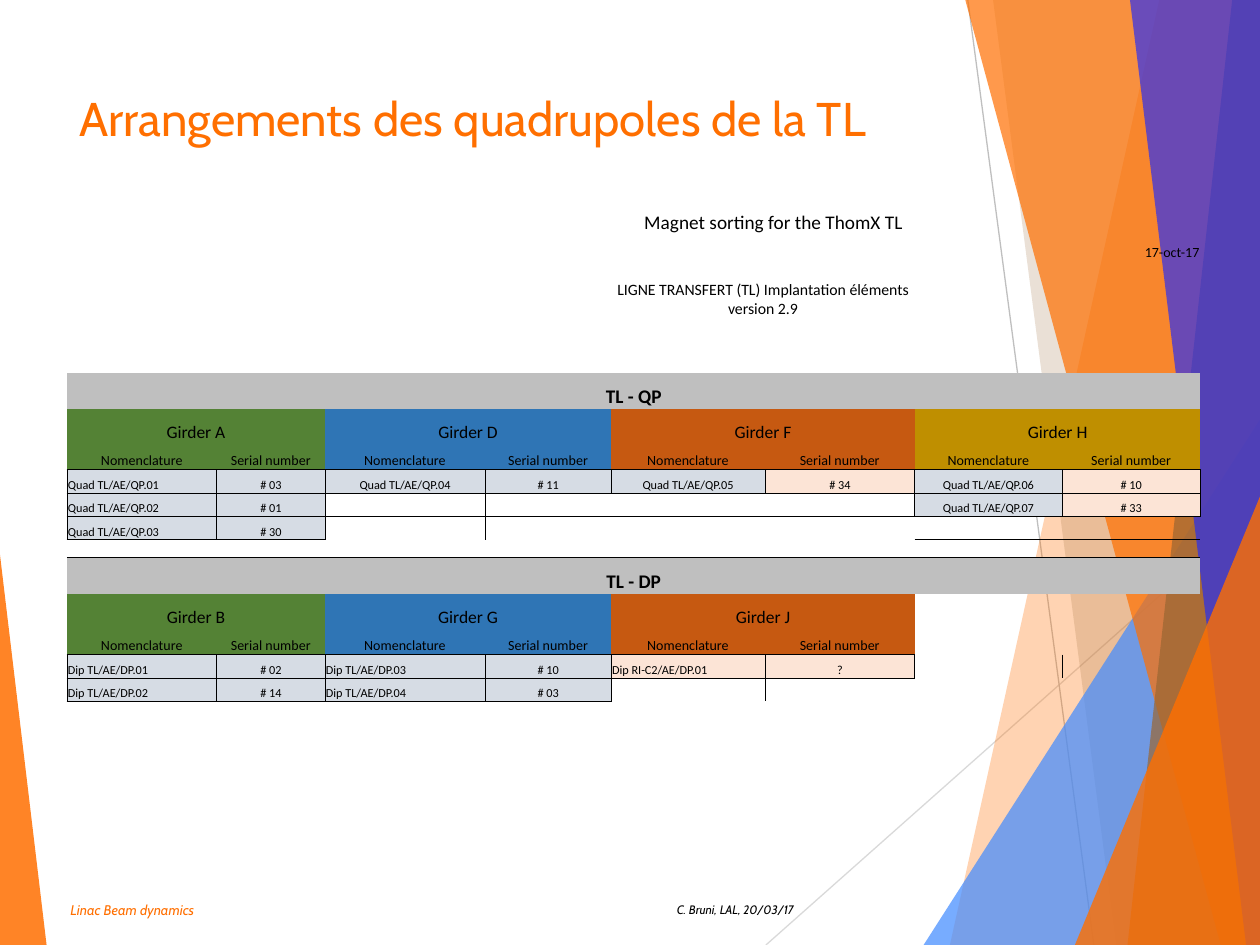
from collections import defaultdict
from lxml import etree
from pptx import Presentation
from pptx.dml.color import RGBColor
from pptx.enum.shapes import MSO_CONNECTOR
from pptx.enum.text import MSO_ANCHOR, PP_ALIGN
from pptx.oxml.ns import qn
from pptx.util import Cm, Pt

LEFT, CENTER, RIGHT = PP_ALIGN.LEFT, PP_ALIGN.CENTER, PP_ALIGN.RIGHT
BOTTOM = MSO_ANCHOR.BOTTOM
STRAIGHT = MSO_CONNECTOR.STRAIGHT

THEME = {
    "heading_font": "Cabin", "table_font": "Calibri",
    "orange": "FF6F00", "brown": "996633", "sky": "438CFF", "violet": "1F29FD",
    "black": "000000", "grey": "BFBFBF", "pale_grey": "D9D9D9",
    "blue_cell": "D6DCE4", "peach_cell": "FCE4D6",
    "girders": ["548235", "2F75B5", "C65911", "BF8F00"],
    "title": 27, "section": 11, "girder": 10, "subtitle": 9,
    "small": 8, "data": 7, "empty": 6,
}
BLUE, PEACH = THEME["blue_cell"], THEME["peach_cell"]
NO_GRID_STYLE = "{2D5ABB26-0587-4C30-8999-92F81FD0307C}"

W, H = 25.4, 19.05
LINES = [((15.44, H), (25.37, 10.24), "pale_grey"), ((19.51, 0), (22.05, H), "grey")]
FACETS = [
    ("orange", 30, [(23.37, 0), (19.15, H), (W, H), (W, 0)]),
    ("brown", 20, [(20.02, 0), (22.5, H), (W, H), (W, 0)]),
    ("sky", 72, [(18.62, H), (W, 8.46), (W, H)]),
    ("orange", 70, [(19.46, 0), (24.61, H), (W, H), (W, 0)]),
    ("brown", 70, [(24.84, 0), (22.73, H), (W, H), (W, 0)]),
    ("violet", 65, [(22.78, 0), (25.12, H), (W, H), (W, 0)]),
    ("orange", 80, [(21.67, H), (W, 10.01), (W, H)]),
    ("orange", 85, [(0, 11.18), (0.94, H), (0, H)]),
]
TEXTS = [
    ("Linac Beam dynamics", (1.24, 18.08, 5.51, 0.53),
     {"size": THEME["small"], "color": THEME["orange"], "italic": True}),
    ("C. Bruni, LAL, 20/03/17", (8.92, 18.08, 7.26, 0.48),
     {"size": THEME["data"], "italic": True, "align": RIGHT}),
    ("Arrangements des quadrupoles de la TL", (1.42, 1.7, 17.91, 1.93),
     {"size": THEME["title"], "color": THEME["orange"]}),
]

COLS = [3.02, 2.18, 3.23, 2.54, 3.1, 3.02, 2.97, 2.79]
HEADINGS = [0.74, 0.69, 0.53]
ROWS = ([0.74, 0.53, 1.17] + [0.36] * 3 + HEADINGS + [0.47] * 3
        + [0.36] + HEADINGS + [0.47] * 2)
NOTES = [
    (0, 3, 4, "Magnet sorting for the ThomX TL", THEME["section"], CENTER),
    (1, 7, 1, "17-oct-17", THEME["small"], RIGHT),
    (2, 4, 2, "LIGNE TRANSFERT (TL) Implantation éléments version 2.9",
     THEME["subtitle"], CENTER),
]
SECTIONS = [
    (6, "TL - QP", [
        ("Girder A", LEFT, BLUE, BLUE, [("Quad TL/AE/QP.01", "# 03"),
                                        ("Quad TL/AE/QP.02", "# 01"),
                                        ("Quad TL/AE/QP.03", "# 30")]),
        ("Girder D", CENTER, BLUE, BLUE, [("Quad TL/AE/QP.04", "# 11")]),
        ("Girder F", CENTER, BLUE, PEACH, [("Quad TL/AE/QP.05", "# 34")]),
        ("Girder H", CENTER, BLUE, PEACH, [("Quad TL/AE/QP.06", "# 10"),
                                           ("Quad TL/AE/QP.07", "# 33")]),
    ]),
    (13, "TL - DP", [
        ("Girder B", LEFT, BLUE, BLUE, [("Dip TL/AE/DP.01", "# 02"),
                                        ("Dip TL/AE/DP.02", "# 14")]),
        ("Girder G", LEFT, BLUE, BLUE, [("Dip TL/AE/DP.03", "# 10"),
                                        ("Dip TL/AE/DP.04", "# 03")]),
        ("Girder J", LEFT, PEACH, PEACH, [("Dip RI-C2/AE/DP.01", "?")]),
    ]),
]


def rgb(color):
    return RGBColor.from_string(color)


def put_text(tf, text, size, font=THEME["heading_font"], color=THEME["black"],
             bold=False, italic=False, align=LEFT):
    p = tf.paragraphs[0]
    p.alignment = align
    r = p.add_run()
    r.text = text
    r.font.name, r.font.size = font, Pt(size)
    r.font.bold, r.font.italic = bold, italic
    r.font.color.rgb = rgb(color)


def add_line(slide, start, end, color):
    line = slide.shapes.add_connector(STRAIGHT, *map(Cm, start + end))
    line.line.color.rgb = rgb(color)
    line.line.width = Pt(0.75)
    etree.SubElement(line._element.spPr, qn("a:effectLst"))


def add_facet(slide, color, opacity, points):
    corners = [(Cm(x), Cm(y)) for x, y in points]
    builder = slide.shapes.build_freeform(*corners[0])
    builder.add_line_segments(corners[1:], close=True)
    sp = builder.convert_to_shape()
    sp.shadow.inherit = False
    sp.line.fill.background()
    sp.fill.solid()
    sp.fill.fore_color.rgb = rgb(color)
    tone = sp._element.spPr.find(qn("a:solidFill"))[0]
    etree.SubElement(tone, qn("a:alpha"), val=str(opacity * 1000))


def add_textbox(slide, text, box, style):
    tf = slide.shapes.add_textbox(*map(Cm, box)).text_frame
    tf.word_wrap = True
    tf.margin_left = tf.margin_right = Cm(0.18)
    tf.margin_top = tf.margin_bottom = Cm(0.1)
    put_text(tf, text, **style)


def plan_table():
    cells, borders, merges = {}, defaultdict(set), []

    def place(row, col, text, size, fill=None, align=CENTER, bold=False, span=1):
        cells[row, col] = (text, fill, {"size": size, "align": align, "bold": bold})
        if span > 1:
            merges.append((row, col, span))

    def outline(row, col):
        borders[row, col] |= set("LRTB")
        for dr, dc, side in ((-1, 0, "B"), (1, 0, "T"), (0, -1, "R"), (0, 1, "L")):
            borders[row + dr, col + dc].add(side)

    for row, col, span, text, size, align in NOTES:
        place(row, col, text, size, align=align, span=span)
    for top, heading, girders in SECTIONS:
        place(top, 0, heading, THEME["section"], THEME["grey"], bold=True, span=len(COLS))
        for i, (girder, align, name_fill, serial_fill, magnets) in enumerate(girders):
            col, fill = 2 * i, THEME["girders"][i]
            place(top + 1, col, girder, THEME["girder"], fill, span=2)
            place(top + 2, col, "Nomenclature", THEME["small"], fill)
            place(top + 2, col + 1, "Serial number", THEME["small"], fill)
            for row, (name, serial) in enumerate(magnets, top + 3):
                place(row, col, name, THEME["data"], name_fill, align)
                place(row, col + 1, serial, THEME["data"], serial_fill)
                outline(row, col)
                outline(row, col + 1)
    return cells, borders, merges


def add_borders(cell, sides):
    tcPr = cell._tc.get_or_add_tcPr()
    for side in "LRTB":
        if side in sides:
            ln = etree.SubElement(tcPr, qn("a:ln" + side), w=str(Pt(0.5)))
            fill = etree.SubElement(ln, qn("a:solidFill"))
            etree.SubElement(fill, qn("a:srgbClr"), val=THEME["black"])


def add_magnet_table(slide):
    frame = slide.shapes.add_table(len(ROWS), len(COLS), Cm(1.35), Cm(3.99),
                                   Cm(sum(COLS)), Cm(sum(ROWS)))
    table = frame.table
    table.first_row = table.horz_banding = False
    table._tbl.tblPr.find(qn("a:tableStyleId")).text = NO_GRID_STYLE
    for column, width in zip(table.columns, COLS):
        column.width = Cm(width)
    cells, borders, merges = plan_table()
    for r, height in enumerate(ROWS):
        table.rows[r].height = Cm(height)
        for c in range(len(COLS)):
            cell = table.cell(r, c)
            cell.margin_left = cell.margin_right = cell.margin_top = Cm(0.02)
            cell.margin_bottom = 0
            cell.vertical_anchor = BOTTOM
            add_borders(cell, borders[r, c])
            text, fill, style = cells.get((r, c), (None, None, None))
            if fill:
                cell.fill.solid()
                cell.fill.fore_color.rgb = rgb(fill)
            else:
                cell.fill.background()
            if text:
                put_text(cell.text_frame, text, font=THEME["table_font"], **style)
            else:
                etree.SubElement(cell.text_frame.paragraphs[0]._p, qn("a:endParaRPr"),
                                 sz=str(THEME["empty"] * 100))
    for row, col, span in merges:
        table.cell(row, col).merge(table.cell(row, col + span - 1))


def main():
    prs = Presentation()
    prs.slide_width, prs.slide_height = Cm(W), Cm(H)
    s = prs.slides.add_slide(prs.slide_layouts[6])
    for start, end, color in LINES:
        add_line(s, start, end, THEME[color])
    for color, opacity, points in FACETS:
        add_facet(s, THEME[color], opacity, points)
    for text, box, style in TEXTS:
        add_textbox(s, text, box, style)
    add_magnet_table(s)
    prs.save("out.pptx")


if __name__ == "__main__":
    main()
